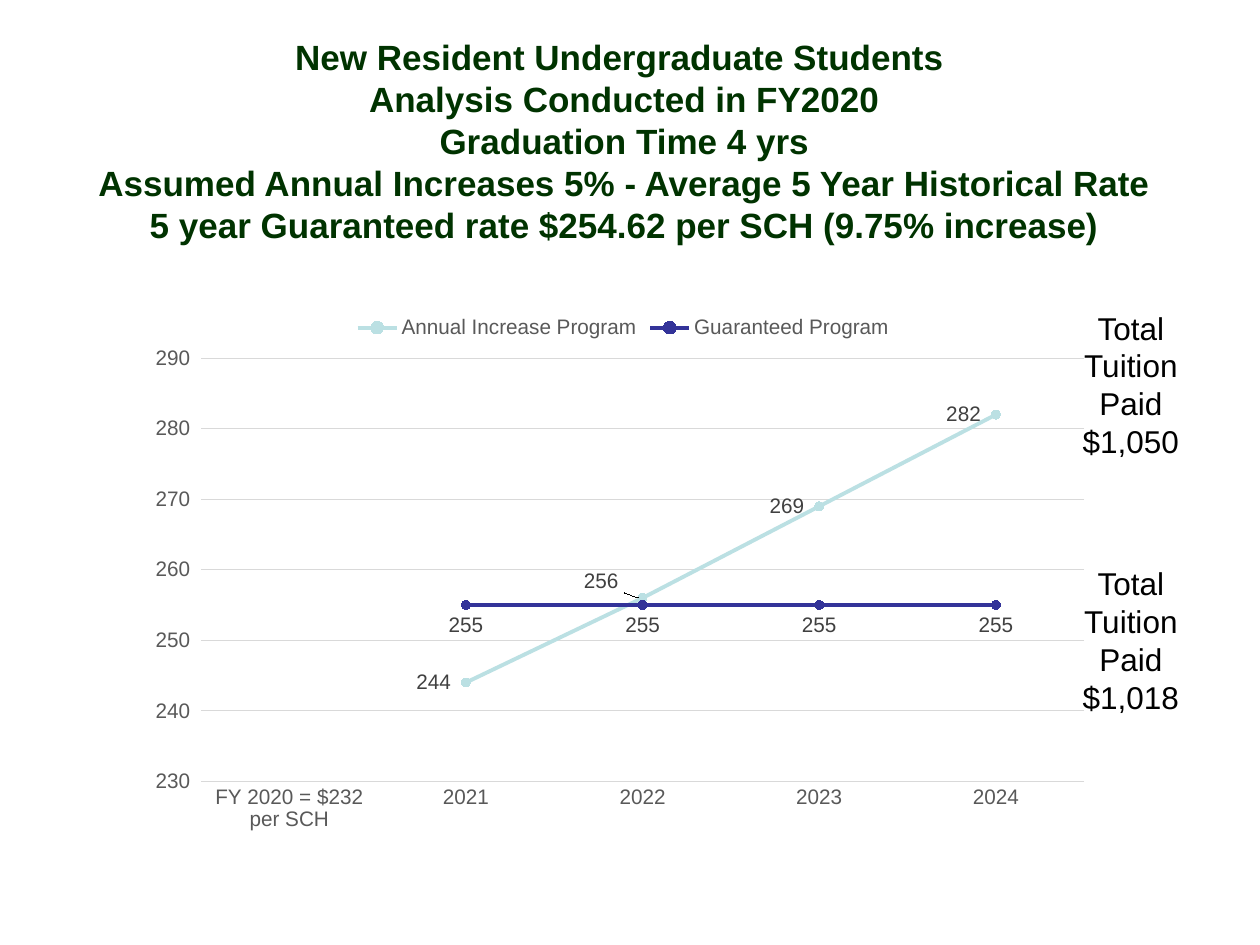
from lxml.etree import SubElement
from pptx import Presentation
from pptx.chart.data import CategoryChartData
from pptx.dml.color import RGBColor
from pptx.enum.chart import XL_CHART_TYPE as CT, XL_LABEL_POSITION as LP
from pptx.enum.chart import XL_LEGEND_POSITION, XL_MARKER_STYLE, XL_TICK_MARK
from pptx.enum.text import MSO_ANCHOR, PP_ALIGN
from pptx.oxml.ns import qn
from pptx.util import Inches, Pt

NUM_FMT = '_(* #,##0_);_(* \\(#,##0\\);_(* "-"_);_(@_'
CATEGORIES = ["FY 2020 = $232 per SCH", "2021", "2022", "2023", "2024"]
SERIES = [
    ("Annual Increase Program", [None, 244, 256, 269, 282], "BBE0E3", LP.LEFT),
    ("Guaranteed Program", [None, 255, 255, 255, 255], "333399", LP.BELOW),
]
TITLE = [
    "New Resident Undergraduate Students ",
    "Analysis Conducted in FY2020",
    "Graduation Time 4 yrs",
    "Assumed Annual Increases 5% - Average 5 Year Historical Rate",
    "5 year Guaranteed rate $254.62 per SCH (9.75% increase)",
]
TOTALS = [(4.43, "$1,018"), (2.4, "$1,050")]


def rgb(value):
    return RGBColor.from_string(value)


def set_font(font, size, color, bold=False):
    font.name, font.size, font.bold = "Arial", Pt(size), bold
    font.color.rgb = rgb(color)


def write(tf, lines, size=18, color="000000", bold=False, anchor=MSO_ANCHOR.TOP):
    tf.word_wrap, tf.vertical_anchor = True, anchor
    for i, line in enumerate(lines):
        p = tf.paragraphs[0] if i == 0 else tf.add_paragraph()
        p.alignment = PP_ALIGN.CENTER
        r = p.add_run()
        r.text = line
        set_font(r.font, size, color, bold)


def set_line(line, color, width):
    line.color.rgb = rgb(color)
    line.width = Pt(width)


def set_layout(parent, index, **values):
    for old in parent.findall(qn("c:layout")):
        parent.remove(old)
    layout = SubElement(parent, qn("c:layout"))
    manual = SubElement(layout, qn("c:manualLayout"))
    for tag, val in values.items():
        SubElement(manual, qn(f"c:{tag}")).set("val", str(val))
    parent.insert(index, layout)


class TuitionSlide:
    """Holds the slide's style and adds its text and line chart."""

    axis_color = "595959"
    grid_color = "D9D9D9"
    label_color = "404040"
    chart_size = 12

    def __init__(self, prs):
        self.s = prs.slides.add_slide(prs.slide_layouts[6])

    def text(self, x, y, w, h, lines, **fmt):
        sp = self.s.shapes.add_textbox(Inches(x), Inches(y), Inches(w), Inches(h))
        write(sp.text_frame, lines, **fmt)

    def chart(self, x, y, w, h):
        data = CategoryChartData(number_format=NUM_FMT)
        data.categories = CATEGORIES
        for name, values, _, _ in SERIES:
            data.add_series(name, values)
        chart = self.s.shapes.add_chart(
            CT.LINE_MARKERS, Inches(x), Inches(y), Inches(w), Inches(h), data).chart
        set_font(chart.font, 10, "000000")
        chart.has_title = False
        chart.has_legend = True
        chart.legend.position = XL_LEGEND_POSITION.TOP
        chart.legend.include_in_layout = False
        set_font(chart.legend.font, self.chart_size, self.axis_color)
        self.axes(chart)
        for ser, (_, _, color, position) in zip(chart.plots[0].series, SERIES):
            self.series(ser, color, position)
        self.raise_label(chart.plots[0].series[0], 2)
        plot_area = chart._chartSpace.chart.plotArea
        set_layout(plot_area, 0, layoutTarget="inner", xMode="edge", yMode="edge",
                   x=0.072, y=0.102, w=0.958, h=0.772)

    def axes(self, chart):
        cat, val = chart.category_axis, chart.value_axis
        for axis in (cat, val):
            axis.major_tick_mark = axis.minor_tick_mark = XL_TICK_MARK.NONE
            set_font(axis.tick_labels.font, self.chart_size, self.axis_color)
        set_line(cat.format.line, self.grid_color, 0.75)
        val.format.line.fill.background()
        val.minimum_scale, val.maximum_scale, val.major_unit = 230, 290, 10
        val.tick_labels.number_format = NUM_FMT
        val.tick_labels.number_format_is_linked = False
        set_line(val.major_gridlines.format.line, self.grid_color, 0.75)

    def series(self, ser, color, position):
        ser.smooth = False
        set_line(ser.format.line, color, 2.25)
        marker = ser.marker
        marker.style, marker.size = XL_MARKER_STYLE.CIRCLE, 5
        marker.format.fill.solid()
        marker.format.fill.fore_color.rgb = rgb(color)
        set_line(marker.format.line, color, 0.75)
        labels = ser.data_labels
        labels.show_value, labels.position = True, position
        labels.number_format, labels.number_format_is_linked = NUM_FMT, False
        set_font(labels.font, self.chart_size, self.label_color)

    def raise_label(self, ser, index):
        label = ser.points[index].data_label
        set_font(label.font, self.chart_size, self.label_color)
        label.position = LP.LEFT
        element = ser._element.find(f".//{qn('c:dLbl')}")
        set_layout(element, 1, x=-0.01, y=-0.03)


def main():
    prs = Presentation()
    prs.slide_width, prs.slide_height = Inches(10), Inches(7.5)
    slide = TuitionSlide(prs)
    slide.text(0.33, 0.38, 9.25, 1.47, TITLE, size=20, color="003300",
               bold=True, anchor=MSO_ANCHOR.MIDDLE)
    slide.chart(1.19, 2.4, 7.42, 4.35)
    for top, total in TOTALS:
        slide.text(8.27, top, 1.41, 1.31, ["Total Tuition", "Paid", total])
    prs.save("out.pptx")


if __name__ == "__main__":
    main()
